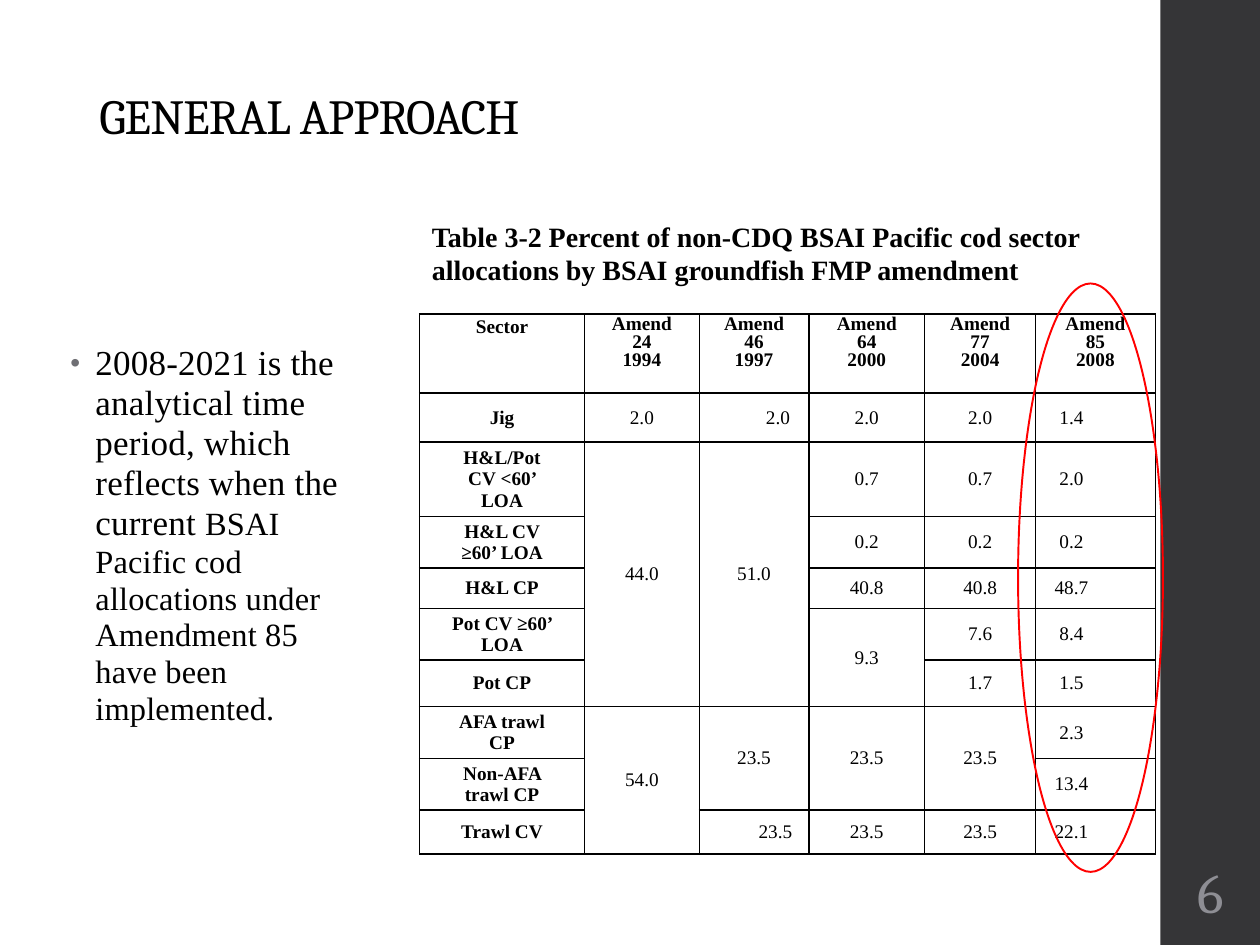
import pptx
import pptx.util
import pptx.dml.color
import pptx.enum.shapes
import pptx.enum.text
import pptx.oxml
import pptx.oxml.ns
from pptx.util import Inches, Pt

COLORS = {"ink": "000000", "band": "353537", "number": "8E8E94", "bullet": "6F6F74", "ring": "FF0000"}
SERIF = "Times New Roman"
HEADING = "Cambria"
ALIGN = pptx.enum.text.PP_ALIGN
ANCHOR = pptx.enum.text.MSO_ANCHOR
SHAPE = pptx.enum.shapes.MSO_SHAPE

COLUMNS = [1.31, 0.91, 0.87, 0.92, 0.88, 0.95]
ROWS = [0.63, 0.39, 0.59, 0.41, 0.32, 0.41, 0.37, 0.41, 0.41, 0.35]
AMENDMENTS = [("24", "1994"), ("46", "1997"), ("64", "2000"), ("77", "2004"), ("85", "2008")]
SECTORS = [
    ("Jig", "2.0", "2.0", "2.0", "2.0", "1.4"),
    ("H&L/Pot CV <60’ LOA", "44.0", "51.0", "0.7", "0.7", "2.0"),
    ("H&L CV ≥60’ LOA", None, None, "0.2", "0.2", "0.2"),
    ("H&L CP", None, None, "40.8", "40.8", "48.7"),
    ("Pot CV ≥60’ LOA", None, None, "9.3", "7.6", "8.4"),
    ("Pot CP", None, None, None, "1.7", "1.5"),
    ("AFA trawl CP", "54.0", "23.5", "23.5", "23.5", "2.3"),
    ("Non-AFA trawl CP", None, None, None, None, "13.4"),
    ("Trawl CV", None, "23.5", "23.5", "23.5", "22.1"),
]
SIDE_INDENTS = {(1, 2): (0.38, 0), (9, 2): (0.34, 0)}


def color(name):
    return pptx.dml.color.RGBColor.from_string(COLORS[name])


def set_font(font, size, name=SERIF, bold=False, ink="ink"):
    font.size = Pt(size)
    font.name = name
    font.bold = bold
    font.color.rgb = color(ink)


def add_text_box(page, left, top, width, height, anchor=ANCHOR.TOP):
    box = page.shapes.add_textbox(Inches(left), Inches(top), Inches(width), Inches(height))
    box.text_frame.word_wrap = True
    box.text_frame.vertical_anchor = anchor
    return box.text_frame


def add_span(para, text, spacing=0):
    span = para.add_run()
    span.text = text
    if spacing:
        span._r.get_or_add_rPr().set("spc", str(spacing))
    return span


def add_sidebar(page, left, top, width, height):
    band = page.shapes.add_shape(SHAPE.RECTANGLE, Inches(left), Inches(top), Inches(width), Inches(height))
    band.shadow.inherit = False
    band.fill.solid()
    band.fill.fore_color.rgb = color("band")
    band.line.fill.background()
    frame = add_text_box(page, left + 0.02, top + 6.75, 0.75, 0.65, ANCHOR.MIDDLE)
    frame.margin_left = frame.margin_right = Inches(0.03)
    para = frame.paragraphs[0]
    para.alignment = ALIGN.CENTER
    add_span(para, "6")
    set_font(para.font, 32, HEADING, ink="number")


def add_title(page, left, top, width, height):
    frame = add_text_box(page, left, top, width, height, ANCHOR.BOTTOM)
    frame.margin_bottom = Inches(0.48)
    para = frame.paragraphs[0]
    para.line_spacing = 0.9
    add_span(para, "GENERAL APPROACH", -50)
    set_font(para.font, 28, HEADING)


def add_bullet_text(page, left, top, width, height):
    para = add_text_box(page, left, top, width, height).paragraphs[0]
    para.line_spacing = 0.95
    props = para._p.get_or_add_pPr()
    props.set("marL", str(Inches(0.2)))
    props.set("indent", str(Inches(-0.2)))
    namespace = pptx.oxml.ns.nsdecls("a")
    for element in (
        f'<a:buClr {namespace}><a:srgbClr val="{COLORS["bullet"]}"/></a:buClr>',
        f'<a:buSzPct {namespace} val="80000"/>',
        f'<a:buFont {namespace} typeface="Arial"/>',
        f'<a:buChar {namespace} char="•"/>',
    ):
        props.append(pptx.oxml.parse_xml(element))
    for text, size in (
        ("2008-2021 is the analytical time period, which reflects when the current ", 20),
        ("BSAI Pacific cod allocations under Amendment 85 have been implemented.", 18.5),
    ):
        set_font(add_span(para, text, 10).font, size)


def add_caption(page, left, top, width, height):
    para = add_text_box(page, left, top, width, height).paragraphs[0]
    add_span(para, "Table 3-2 Percent of non-CDQ BSAI Pacific cod sector allocations by BSAI groundfish FMP amendment")
    set_font(para.font, 16, bold=True)


def style_cell(cell):
    cell.fill.background()
    cell.margin_left = cell.margin_right = Inches(0.04)
    cell.margin_top = cell.margin_bottom = Inches(0.02)
    props = cell._tc.get_or_add_tcPr()
    for place, side in enumerate("LRTB"):
        props.insert(place, pptx.oxml.parse_xml(
            f'<a:ln{side} {pptx.oxml.ns.nsdecls("a")} w="{Pt(1)}"><a:solidFill>'
            f'<a:srgbClr val="{COLORS["ink"]}"/></a:solidFill></a:ln{side}>'))


def write_cell(cell, lines, indents, bold, anchor=ANCHOR.MIDDLE):
    cell.vertical_anchor = anchor
    cell.text = "\n".join(lines)
    for para in cell.text_frame.paragraphs:
        para.alignment = ALIGN.CENTER
        props = para._p.get_or_add_pPr()
        for name, indent in zip(("marL", "marR"), indents):
            props.set(name, str(Inches(indent)))
        if len(lines) > 1:
            para.line_spacing = Pt(10.3)
        set_font(para.font, 11, bold=bold)


def add_allocation_table(page, left, top, width, height):
    table = page.shapes.add_table(
        len(ROWS), len(COLUMNS), Inches(left), Inches(top), Inches(width), Inches(height)).table
    table.first_row = table.horz_banding = False
    for column, size in zip(table.columns, COLUMNS):
        column.width = Inches(size)
    for row, size in zip(table.rows, ROWS):
        row.height = Inches(size)
    for cell in table.iter_cells():
        style_cell(cell)
    write_cell(table.cell(0, 0), ["Sector"], (0.2, 0.2), True, ANCHOR.TOP)
    for col, (number, year) in enumerate(AMENDMENTS, 1):
        write_cell(table.cell(0, col), [f"Amend {number}", year], (0.15, 0.15), True, ANCHOR.TOP)
    last = len(COLUMNS) - 1
    for row, values in enumerate(SECTORS, 1):
        for col, value in enumerate(values):
            if value is None:
                continue
            end = row
            while end < len(SECTORS) and SECTORS[end][col] is None:
                end += 1
            if end > row:
                table.cell(row, col).merge(table.cell(end, col))
            usual = (0.2, 0.2) if col == 0 else (0, 0.38) if col == last else (0.15, 0.15)
            write_cell(table.cell(row, col), [value], SIDE_INDENTS.get((row, col), usual), col == 0)


def add_highlight(page, left, top, width, height):
    ring = page.shapes.add_shape(SHAPE.OVAL, Inches(left), Inches(top), Inches(width), Inches(height))
    ring.shadow.inherit = False
    ring.fill.background()
    ring.line.color.rgb = color("ring")
    ring.line.width = Pt(1.1)


def main():
    deck = pptx.Presentation()
    deck.slide_width, deck.slide_height = Inches(10), Inches(7.5)
    page = deck.slides.add_slide(deck.slide_layouts[6])
    add_sidebar(page, 9.21, 0, 0.8, 7.5)
    add_title(page, 0.69, 0.46, 8.54, 1.17)
    add_bullet_text(page, 0.46, 2.68, 2.4, 3.54)
    add_caption(page, 3.33, 1.69, 5.53, 0.64)
    add_allocation_table(page, 3.33, 2.49, sum(COLUMNS), sum(ROWS))
    add_highlight(page, 8.08, 2.25, 1.15, 4.67)
    deck.save("out.pptx")


if __name__ == "__main__":
    main()
